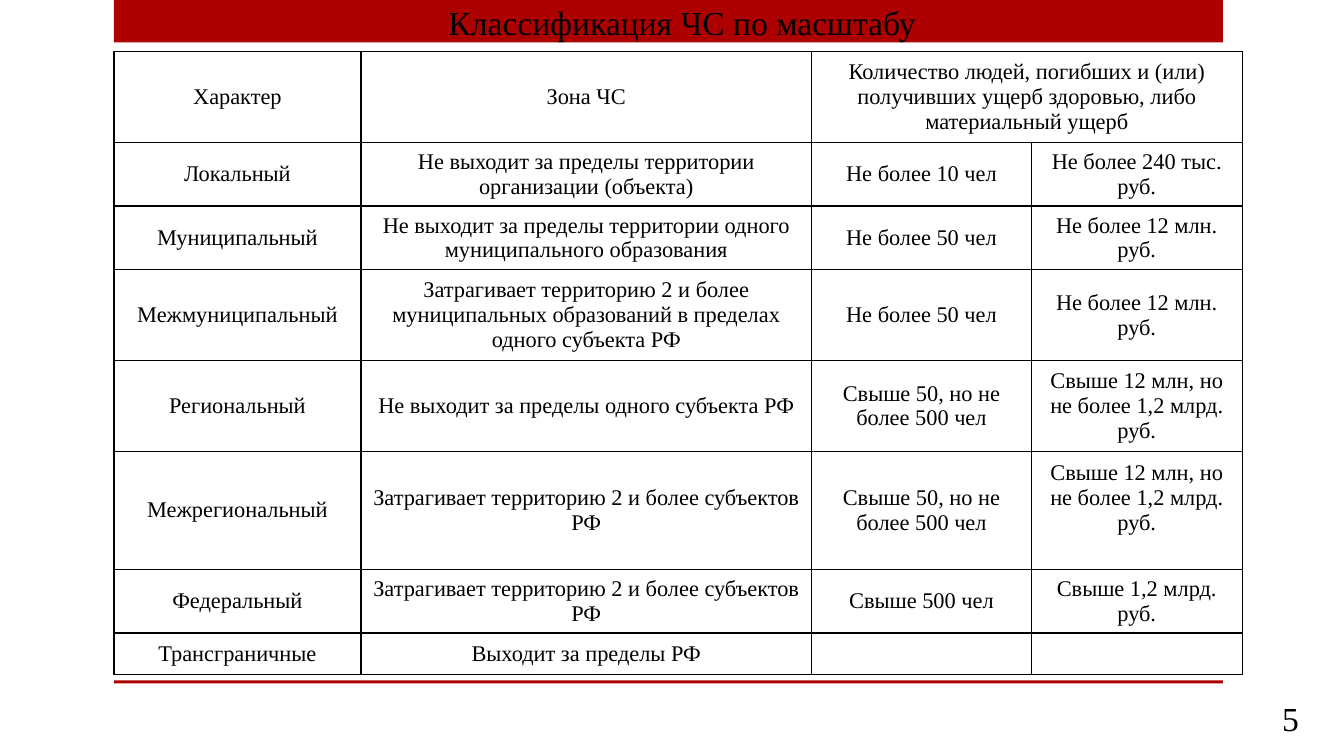
from lxml import etree
from pptx import Presentation
from pptx.dml.color import RGBColor
from pptx.enum import shapes, text
from pptx.oxml.ns import qn
from pptx.util import Inches, Pt

COLORS = {"accent": "AD0101", "ink": "000000"}
FONT = "Times New Roman"
LEFT, BAND_WIDTH = 1.13, 11
COLUMNS = [2.45, 4.47, 2.18, 2.09]
LINE_HEIGHTS = {1: 0.41, 2: 0.63, 3: 0.9, 4: 1.17}
ROW_LINES = [3, 2, 2, 3, 3, 4, 2, 1]
ROWS = [
    ["Характер", "Зона ЧС",
     "Количество людей, погибших и (или) получивших ущерб здоровью, либо материальный ущерб", ""],
    ["Локальный", "Не выходит за пределы территории организации (объекта)",
     "Не более 10 чел", "Не более 240 тыс. руб."],
    ["Муниципальный", "Не выходит за пределы территории одного муниципального образования",
     "Не более 50 чел", "Не более 12 млн. руб."],
    ["Межмуниципальный",
     "Затрагивает территорию 2 и более муниципальных образований в пределах одного субъекта РФ",
     "Не более 50 чел", "Не более 12 млн. руб."],
    ["Региональный", "Не выходит за пределы одного субъекта РФ",
     "Свыше 50, но не более 500 чел", "Свыше 12 млн, но не более 1,2 млрд. руб."],
    ["Межрегиональный", "Затрагивает территорию 2 и более субъектов РФ",
     "Свыше 50, но не более 500 чел", "Свыше 12 млн, но не более 1,2 млрд. руб."],
    ["Федеральный", "Затрагивает территорию 2 и более субъектов РФ",
     "Свыше 500 чел", "Свыше 1,2 млрд. руб."],
    ["Трансграничные", "Выходит за пределы РФ", "", ""],
]


def write(tf, words, size, align):
    tf.text = words
    p = tf.paragraphs[0]
    p.alignment = align
    p.font.size = Pt(size)
    for r in p.runs:
        r.font.size = Pt(size)
        r.font.name = FONT
        r.font.color.rgb = RGBColor.from_string(COLORS["ink"])


def add_band(s, top, height):
    sp = s.shapes.add_shape(shapes.MSO_SHAPE.RECTANGLE, Inches(LEFT), Inches(top),
                            Inches(BAND_WIDTH), Inches(height))
    sp.shadow.inherit = False
    sp.fill.solid()
    sp.fill.fore_color.rgb = RGBColor.from_string(COLORS["accent"])
    sp.line.fill.background()


def add_text(s, box, words, align, anchor):
    tf = s.shapes.add_textbox(*map(Inches, box)).text_frame
    tf.word_wrap = True
    tf.vertical_anchor = anchor
    write(tf, words, 24, align)


def add_borders(cell):
    tc_pr = cell._tc.get_or_add_tcPr()
    for position, side in enumerate(("a:lnL", "a:lnR", "a:lnT", "a:lnB")):
        ln = etree.Element(qn(side), w=str(Pt(1)))
        fill = etree.SubElement(ln, qn("a:solidFill"))
        etree.SubElement(fill, qn("a:srgbClr"), val=COLORS["ink"])
        tc_pr.insert(position, ln)


def add_scale_table(s):
    heights = [LINE_HEIGHTS[lines] for lines in ROW_LINES]
    table = s.shapes.add_table(len(ROWS), len(COLUMNS), Inches(LEFT), Inches(0.51),
                               Inches(sum(COLUMNS)), Inches(sum(heights))).table
    table.first_row = table.horz_banding = False
    for column, width in zip(table.columns, COLUMNS):
        column.width = Inches(width)
    for row, height, words in zip(table.rows, heights, ROWS):
        row.height = Inches(height)
        for cell, content in zip(row.cells, words):
            write(cell.text_frame, content, 16, text.PP_ALIGN.CENTER)
            cell.vertical_anchor = text.MSO_ANCHOR.MIDDLE
            cell.fill.background()
            add_borders(cell)
    table.cell(0, 2).merge(table.cell(0, 3))
    interregional_damage = table.cell(5, 3)
    interregional_damage.vertical_anchor = text.MSO_ANCHOR.TOP
    interregional_damage.margin_top = Inches(0.09)


def main():
    prs = Presentation()
    prs.slide_width, prs.slide_height = Inches(13.33), Inches(7.5)
    s = prs.slides.add_slide(prs.slide_layouts[6])
    add_band(s, 0, 0.42)
    add_band(s, 6.75, 0.03)
    add_text(s, (12.23, 6.92, 0.75, 0.4), "5", text.PP_ALIGN.RIGHT, text.MSO_ANCHOR.MIDDLE)
    add_text(s, (4.35, -0.03, 5.43, 0.5), "Классификация ЧС по масштабу",
             text.PP_ALIGN.LEFT, text.MSO_ANCHOR.TOP)
    add_scale_table(s)
    prs.save("out.pptx")


if __name__ == "__main__":
    main()
